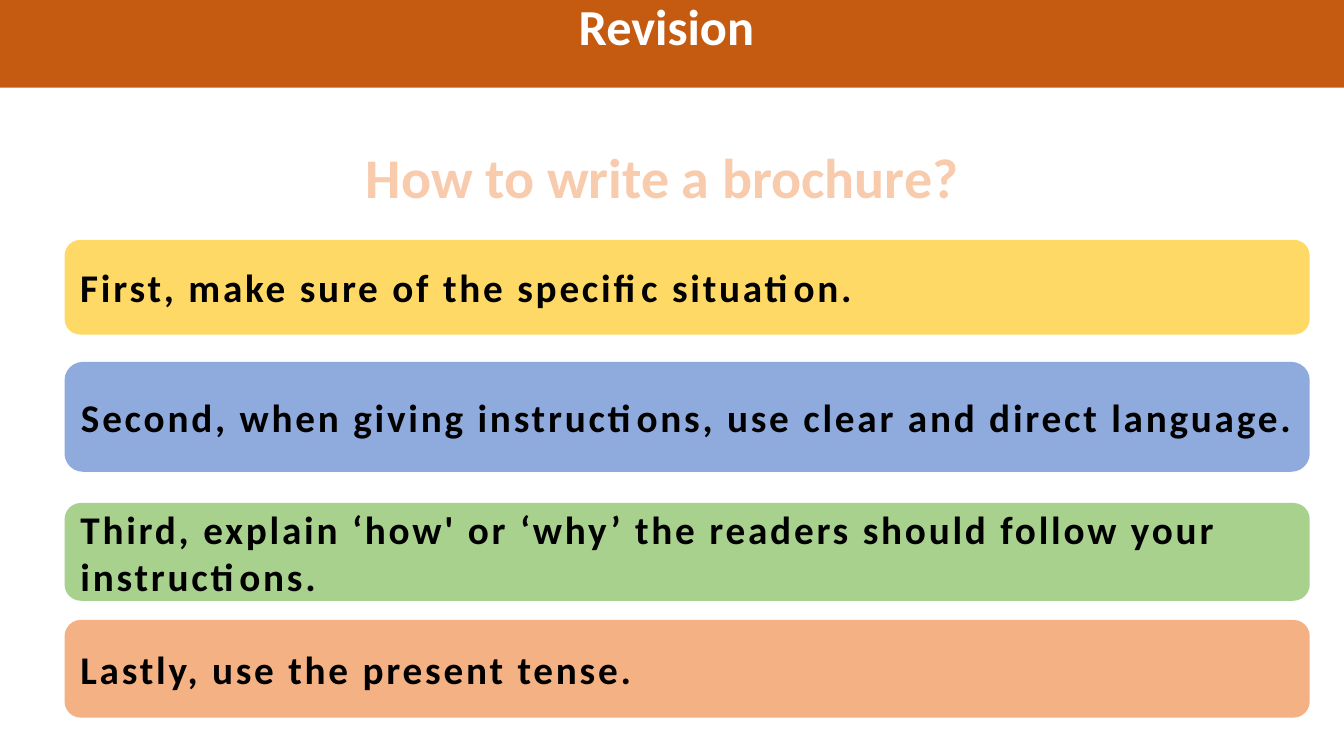
from pptx import Presentation
from pptx.dml.color import RGBColor
from pptx.enum.shapes import MSO_SHAPE as Shape
from pptx.enum.text import MSO_ANCHOR as Anchor, PP_ALIGN as Align
from pptx.util import Inches, Pt


def color(hex_string):
    return RGBColor.from_string(hex_string)


def write(shape, text, size, text_color, align=Align.LEFT, anchor=Anchor.MIDDLE,
          left=0.11, right=0.08, spacing=0):
    frame = shape.text_frame
    frame.word_wrap = True
    frame.vertical_anchor = anchor
    frame.margin_left, frame.margin_right = Inches(left), Inches(right)
    frame.margin_top = frame.margin_bottom = Inches(0.04)
    paragraph = frame.paragraphs[0]
    paragraph.alignment = align
    run = paragraph.add_run()
    run.text = text
    run.font.name, run.font.size, run.font.bold = "Calibri", Pt(size), True
    run.font.color.rgb = color(text_color)
    if spacing:
        run._r.get_or_add_rPr().set("spc", str(spacing * 100))
    return paragraph


presentation = Presentation()
presentation.slide_width, presentation.slide_height = Inches(13.33), Inches(7.5)
slide = presentation.slides.add_slide(presentation.slide_layouts[5])

# Title band
title = slide.shapes.title
title.left, title.top = Inches(-0.01), Inches(-0.02)
title.width, title.height = Inches(13.36), Inches(0.89)
title.fill.solid()
title.fill.fore_color.rgb = color("C55A11")
paragraph = write(title, "Revision", 36, "FFFFFF", align=Align.CENTER,
                  anchor=Anchor.TOP, left=0.1, right=0.22)
paragraph.line_spacing = 0.9

# Steps: top, height, fill, text
steps = [
    (2.38, 0.94, "FFD966", "First, make sure of the specific situation."),
    (3.59, 1.09, "8FAADC",
     "Second, when giving instructions, use clear and direct language."),
    (4.99, 0.97, "A9D18E",
     "Third, explain ‘how' or ‘why’ the readers should follow your instructions."),
    (6.15, 0.97, "F4B183", "Lastly, use the present tense."),
]
for top, height, fill, text in steps:
    step = slide.shapes.add_shape(Shape.ROUNDED_RECTANGLE, Inches(0.64), Inches(top),
                                  Inches(12.35), Inches(height))
    step.shadow.inherit = False
    step.fill.solid()
    step.fill.fore_color.rgb = color(fill)
    step.line.fill.background()
    write(step, text, 28, "000000", spacing=2)

# Question above the steps
question = slide.shapes.add_textbox(Inches(3.42), Inches(0.71), Inches(9.3), Inches(2.08))
write(question, "How to write a brochure?", 40, "F8CBAD", left=0.21)

presentation.save("out.pptx")
